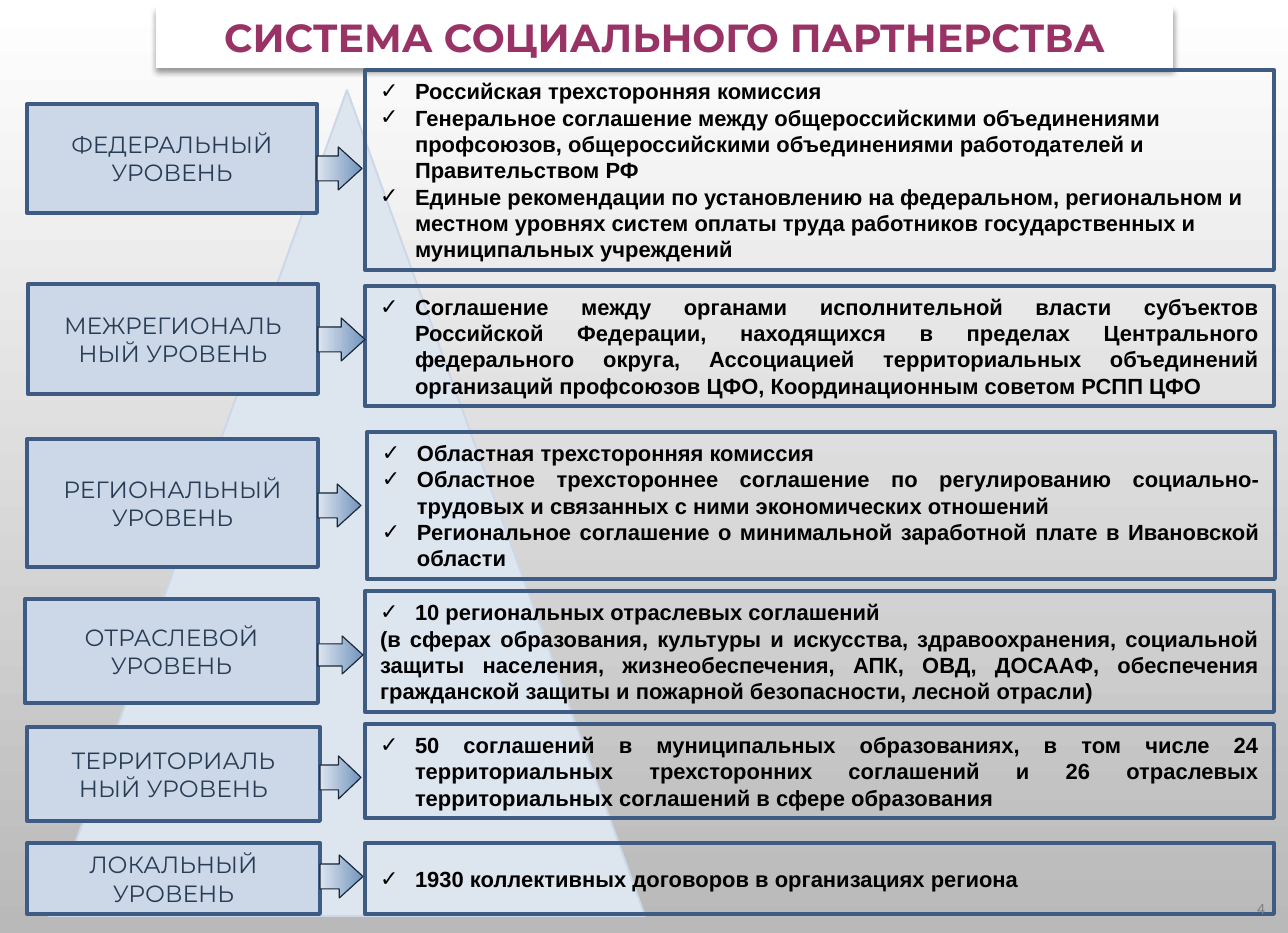
from lxml import etree
from pptx import Presentation
from pptx import util as u
from pptx.dml.color import RGBColor
from pptx.enum import shapes, text
from pptx.oxml import ns

PX = 914400 / 112.8
WHITE = RGBColor(0xFF, 0xFF, 0xFF)
BLACK = RGBColor(0, 0, 0)
GREY = RGBColor(0xB9, 0xB9, 0xB9)
NUMBER_GREY = RGBColor(0x80, 0x80, 0x80)
PALE = RGBColor(0xDD, 0xE5, 0xEF)
LABEL_FILL = RGBColor(0xCC, 0xD8, 0xE7)
FRAME = RGBColor(0x3E, 0x5C, 0x83)
NAVY = RGBColor(0x28, 0x3C, 0x55)
ARROW_TIP = RGBColor(0x72, 0x94, 0xBD)
ARROW_EDGE = RGBColor(0x1A, 0x28, 0x39)
PLUM = RGBColor(0x99, 0x33, 0x66)

ALIGN = text.PP_ALIGN
LEVEL_FORMAT = {"size": u.Pt(15), "name": "Montserrat"}
ITEM_FORMAT = {"size": u.Pt(14), "name": "Arial", "bold": True}
TITLE_FORMAT = {"size": u.Pt(25), "name": "Montserrat", "bold": True}
NUMBER_FORMAT = {"size": u.Pt(10), "name": "Calibri"}
FRAME_FORMAT = {
    "margin_left": round(15 * PX), "margin_right": round(15 * PX),
    "margin_top": round(7 * PX), "margin_bottom": round(7 * PX),
    "word_wrap": True, "vertical_anchor": text.MSO_ANCHOR.MIDDLE,
}

# level, label box, arrow (top, width, height), list box, alignment, items
LEVELS = [
    ("ФЕДЕРАЛЬНЫЙ УРОВЕНЬ", (27, 104, 290, 109), (147, 45, 43),
     (365, 70, 909, 200), ALIGN.LEFT, [
        "Российская трехсторонняя комиссия",
        "Генеральное соглашение между общероссийскими объединениями профсоюзов, "
        "общероссийскими объединениями работодателей и Правительством РФ",
        "Единые рекомендации по установлению на федеральном, региональном и местном "
        "уровнях систем оплаты труда работников государственных и муниципальных учреждений",
     ]),
    ("МЕЖРЕГИОНАЛЬ\nНЫЙ УРОВЕНЬ", (28, 284, 290, 110), (318, 47, 43),
     (365, 286, 909, 120), ALIGN.JUSTIFY, [
        "Соглашение между органами исполнительной власти субъектов Российской Федерации, "
        "находящихся в пределах Центрального федерального округа, Ассоциацией "
        "территориальных объединений организаций профсоюзов ЦФО, Координационным советом "
        "РСПП ЦФО",
     ]),
    ("РЕГИОНАЛЬНЫЙ УРОВЕНЬ", (27, 439, 291, 128), (484, 43, 43),
     (367, 432, 908, 147), ALIGN.JUSTIFY, [
        "Областная трехсторонняя комиссия",
        "Областное трехстороннее соглашение по регулированию социально-трудовых и "
        "связанных с ними экономических отношений",
        "Региональное соглашение о минимальной заработной плате в Ивановской области",
     ]),
    ("ОТРАСЛЕВОЙ УРОВЕНЬ", (25, 599, 293, 104), (636, 45, 38),
     (365, 591, 909, 121), ALIGN.JUSTIFY, [
        "10 региональных отраслевых соглашений",
        "(в сферах образования, культуры и искусства, здравоохранения, социальной защиты "
        "населения, жизнеобеспечения, АПК, ОВД, ДОСААФ, обеспечения гражданской защиты и "
        "пожарной безопасности, лесной отрасли)",
     ]),
    ("ТЕРРИТОРИАЛЬ\nНЫЙ УРОВЕНЬ", (27, 727, 293, 94), (756, 41, 43),
     (365, 724, 909, 94), ALIGN.JUSTIFY, [
        "50 соглашений в муниципальных образованиях, в том числе 24 территориальных "
        "трехсторонних соглашений и 26 отраслевых территориальных соглашений в сфере "
        "образования",
     ]),
    ("ЛОКАЛЬНЫЙ УРОВЕНЬ", (27, 843, 293, 71), (855, 43, 43),
     (365, 843, 909, 71), ALIGN.JUSTIFY, [
        "1930 коллективных договоров в организациях региона",
     ]),
]


def add_figure(preset, box, line_color, line_width):
    figure = slide.shapes.add_shape(preset, *(round(v * PX) for v in box))
    figure.shadow.inherit = False
    figure.line.color.rgb = line_color
    figure.line.width = u.Pt(line_width)
    return figure


def write(holder, lines, align, color, font_format):
    """Fill a shape with one formatted paragraph per line."""
    frame = holder.text_frame
    for key, value in FRAME_FORMAT.items():
        setattr(frame, key, value)
    frame.text = "\n".join(lines)
    for paragraph in frame.paragraphs:
        paragraph.alignment = align
        font = paragraph.runs[0].font
        font.color.rgb = color
        for key, value in font_format.items():
            setattr(font, key, value)
    return frame.paragraphs


prs = Presentation()
prs.slide_width = round(1288 * PX)
prs.slide_height = round(933 * PX)
slide = prs.slides.add_slide(prs.slide_layouts[5])

backdrop = slide.background.fill
backdrop.gradient()
backdrop.gradient_angle = 270
for stop, color in zip(backdrop.gradient_stops, (WHITE, GREY)):
    stop.color.rgb = color

title = slide.shapes.title
title.left, title.top, title.width, title.height = (
    round(v * PX) for v in (156, 6, 1017, 62))
title.fill.solid()
title.fill.fore_color.rgb = WHITE
write(title, ["СИСТЕМА СОЦИАЛЬНОГО ПАРТНЕРСТВА"], ALIGN.CENTER, PLUM, TITLE_FORMAT)
effects = etree.SubElement(title._element.spPr, ns.qn("a:effectLst"))
title_shadow = etree.SubElement(
    effects, ns.qn("a:outerShdw"), blurRad=str(u.Pt(4)), dist=str(u.Pt(3)),
    dir="5400000", algn="t", rotWithShape="0")
shadow_color = etree.SubElement(title_shadow, ns.qn("a:srgbClr"), val="000000")
etree.SubElement(shadow_color, ns.qn("a:alpha"), val="40000")

pyramid = add_figure(shapes.MSO_SHAPE.ISOSCELES_TRIANGLE, (49, 90, 596, 826),
                     LABEL_FILL, 1.25)
pyramid.fill.solid()
pyramid.fill.fore_color.rgb = PALE

for level, label_box, (arrow_top, arrow_w, arrow_h), list_box, align, items in LEVELS:
    label = add_figure(shapes.MSO_SHAPE.RECTANGLE, label_box, FRAME, 2.5)
    label.fill.solid()
    label.fill.fore_color.rgb = LABEL_FILL
    write(label, level.split("\n"), ALIGN.CENTER, NAVY, LEVEL_FORMAT)

    agreements = add_figure(shapes.MSO_SHAPE.RECTANGLE, list_box, FRAME, 2.5)
    agreements.fill.background()
    for item in write(agreements, items, align, BLACK, ITEM_FORMAT):
        if item.text.startswith("("):
            continue
        properties = item._p.get_or_add_pPr()
        properties.set("marL", str(round(35 * PX)))
        properties.set("indent", str(round(-35 * PX)))
        etree.SubElement(properties, ns.qn("a:buFont"), typeface="Arial")
        etree.SubElement(properties, ns.qn("a:buChar"), char="✓")

    arrow_left = label_box[0] + label_box[2]
    arrow = add_figure(shapes.MSO_SHAPE.RIGHT_ARROW,
                       (arrow_left, arrow_top, arrow_w, arrow_h), ARROW_EDGE, 0.75)
    arrow.adjustments[0] = 0.58
    arrow.adjustments[1] = 0.55
    arrow.fill.gradient()
    arrow.fill.gradient_angle = 0
    for stop, color in zip(arrow.fill.gradient_stops, (PALE, ARROW_TIP)):
        stop.color.rgb = color

page_number = slide.shapes.add_textbox(*(round(v * PX) for v in (1199, 883, 81, 50)))
write(page_number, ["4"], ALIGN.RIGHT, NUMBER_GREY, NUMBER_FORMAT)

prs.save("out.pptx")
